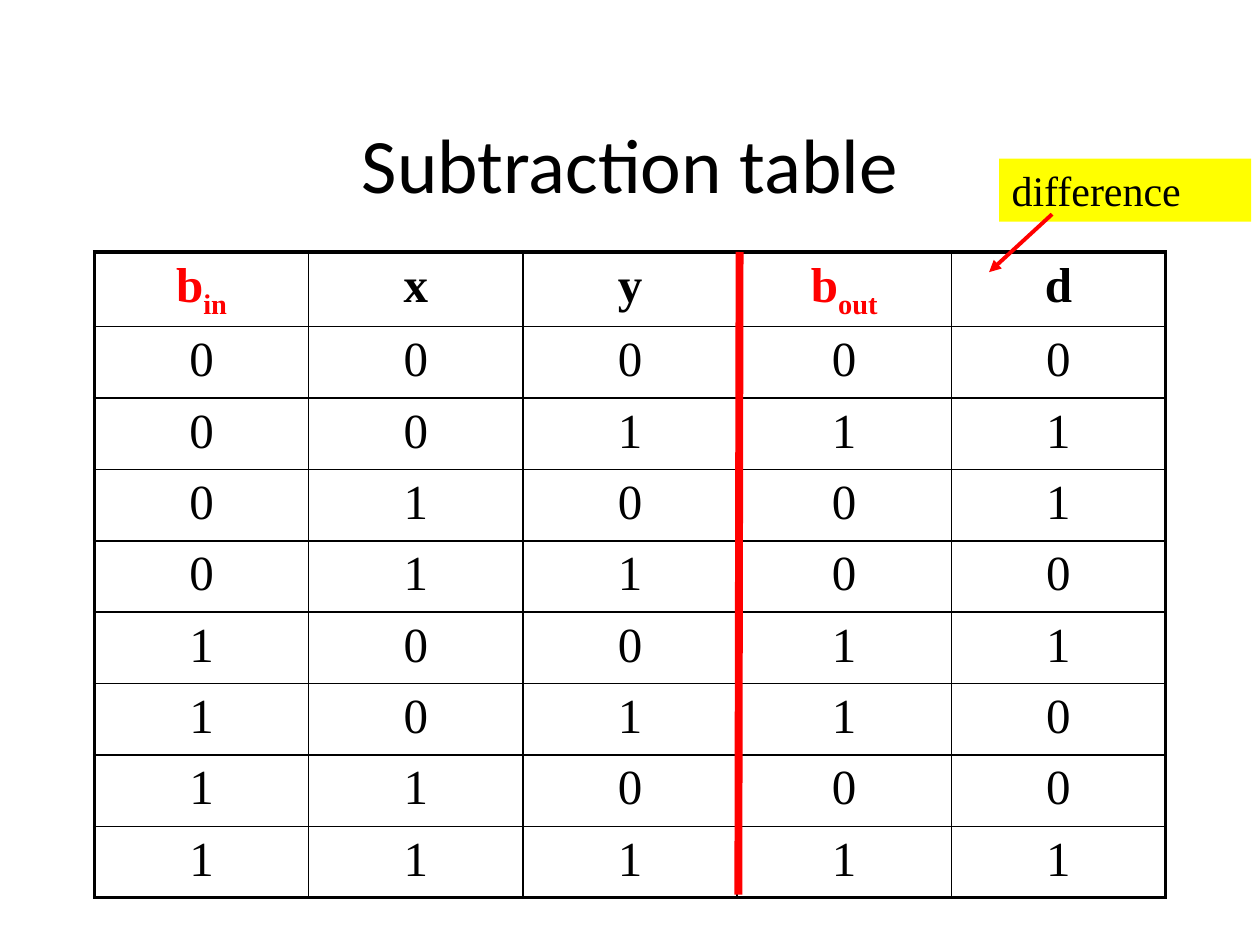
from itertools import product

from pptx import Presentation
from pptx.dml.color import RGBColor
from pptx.enum.shapes import MSO_CONNECTOR as Connector
from pptx.enum.text import MSO_ANCHOR as Anchor, MSO_AUTO_SIZE as AutoSize, PP_ALIGN as Align
from pptx.oxml.ns import qn
from pptx.util import Pt
from lxml.etree import SubElement

PX = 9144
BLACK = RGBColor(0, 0, 0)
RED = RGBColor(255, 0, 0)
YELLOW = RGBColor(255, 255, 0)
SERIF = "Times New Roman"
THIN, THICK = 1, 2.25

HEADINGS = [("b", "in"), ("x", ""), ("y", ""), ("b", "out"), ("d", "")]


def emu(*lengths):
    return [length * PX for length in lengths]


def add_run(paragraph, text, size, color, font=SERIF, bold=False):
    run = paragraph.add_run()
    run.text = text
    run.font.name = font
    run.font.size = Pt(size)
    run.font.color.rgb = color
    run.font.bold = bold
    return run


def add_title(slide, box):
    title = slide.shapes.title
    title.left, title.top, title.width, title.height = emu(*box)
    title.text_frame.vertical_anchor = Anchor.MIDDLE
    heading = title.text_frame.paragraphs[0]
    heading.alignment = Align.CENTER
    add_run(heading, "Subtraction table", 44, BLACK, "Calibri")


def subtraction_rows():
    for borrow_in, x, y in product((0, 1), repeat=3):
        result = x - y - borrow_in
        yield borrow_in, x, y, int(result < 0), result % 2


def set_borders(cell, widths):
    properties = cell._tc.get_or_add_tcPr()
    for side, width in widths.items():
        border = SubElement(properties, qn(f"a:ln{side}"), w=str(Pt(width)))
        fill = SubElement(border, qn("a:solidFill"))
        SubElement(fill, qn("a:srgbClr"), val=str(BLACK))


def center_cell(cell):
    paragraph = cell.text_frame.paragraphs[0]
    paragraph.alignment = Align.CENTER
    spacing = SubElement(paragraph._p.get_or_add_pPr(), qn("a:spcBef"))
    SubElement(spacing, qn("a:spcPct"), val="20000")
    return paragraph


def add_heading(paragraph, symbol, subscript):
    color = RED if subscript else BLACK
    add_run(paragraph, symbol, 28, color, bold=True)
    if subscript:
        index = add_run(paragraph, subscript, 28, color, bold=True)
        index._r.get_or_add_rPr().set("baseline", "-25000")


def add_truth_table(slide, box):
    rows = [HEADINGS, *subtraction_rows()]
    last_row, last_column = len(rows) - 1, len(HEADINGS) - 1
    table = slide.shapes.add_table(len(rows), len(HEADINGS), *emu(*box)).table
    table.first_row = table.horz_banding = False
    for r, values in enumerate(rows):
        for c, value in enumerate(values):
            cell = table.cell(r, c)
            set_borders(cell, {
                "L": THICK if c == 0 else THIN,
                "R": THICK if c == last_column else THIN,
                "T": THICK if r == 0 else THIN,
                "B": THICK if r == last_row else THIN,
            })
            cell.fill.background()
            paragraph = center_cell(cell)
            if r == 0:
                add_heading(paragraph, *value)
            else:
                add_run(paragraph, str(value), 28, BLACK)


def add_line(slide, start, end, width, arrow=False):
    line = slide.shapes.add_connector(Connector.STRAIGHT, *emu(*start, *end))
    line.line.color.rgb = RED
    line.line.width = Pt(width)
    if arrow:
        SubElement(line.line._get_or_add_ln(), qn("a:tailEnd"), type="triangle")
    SubElement(line._element.spPr, qn("a:effectLst"))


def add_difference_label(slide, box):
    left, top, width, height = box
    label = slide.shapes.add_textbox(*emu(*box))
    label.fill.solid()
    label.fill.fore_color.rgb = YELLOW
    label.text_frame.word_wrap = True
    label.text_frame.auto_size = AutoSize.SHAPE_TO_FIT_TEXT
    add_run(label.text_frame.paragraphs[0], "difference", 24, BLACK)
    add_line(slide, (left + 42, top + 44), (left - 8, top + 90), 2.25, arrow=True)


def add_output_divider(slide, box):
    left, top, width, height = box
    add_line(slide, (left + width, top), (left, top + height), 4.5)


def main():
    presentation = Presentation()
    presentation.slide_width, presentation.slide_height = emu(1000, 750)
    slide = presentation.slides.add_slide(presentation.slide_layouts[5])
    add_title(slide, (75, 67, 850, 125))
    add_truth_table(slide, (75, 200, 850, 510))
    add_difference_label(slide, (793, 126, 200, 50))
    add_output_divider(slide, (586, 200, 1, 510))
    presentation.save("out.pptx")


if __name__ == "__main__":
    main()
